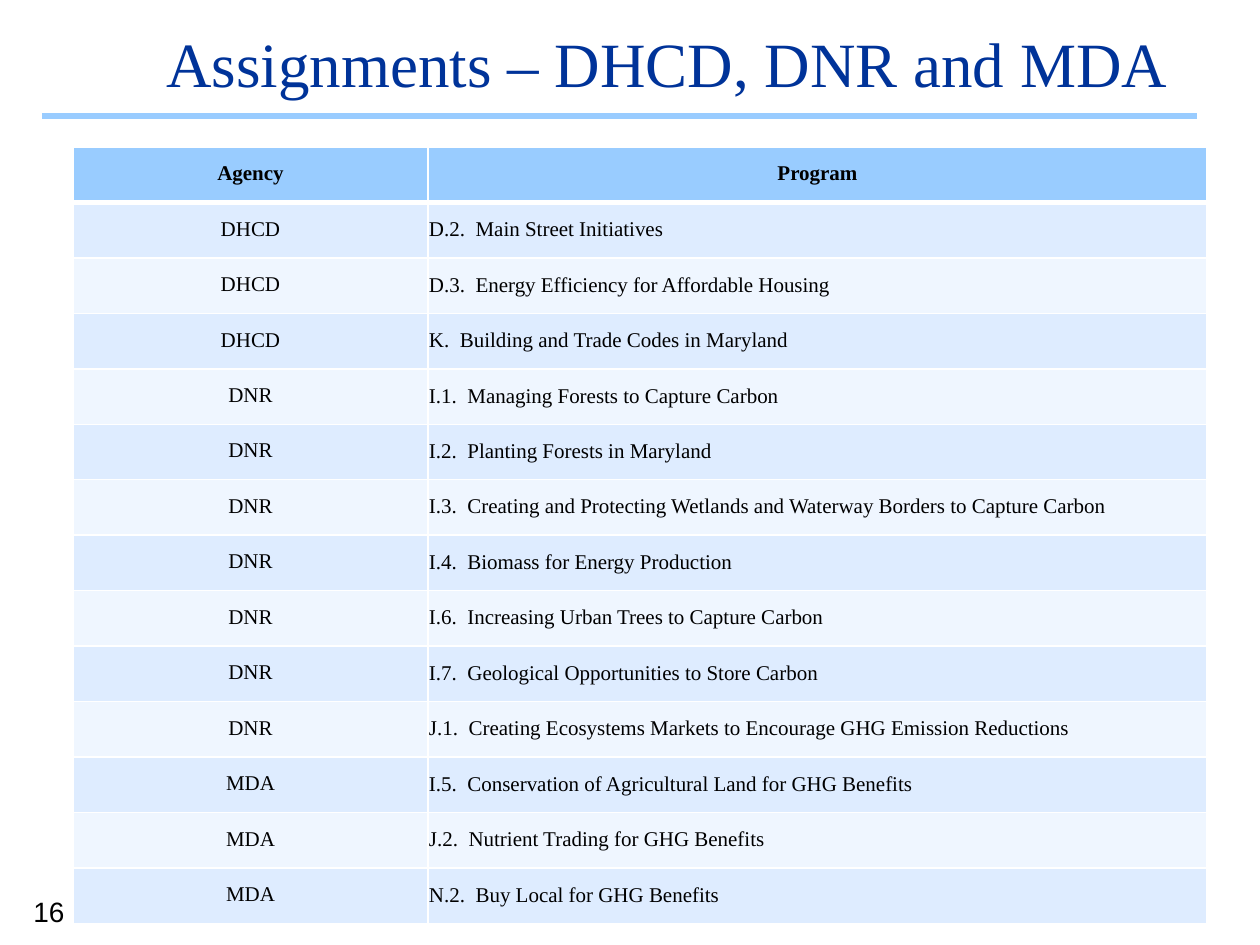
from lxml.etree import SubElement
from pptx import Presentation
from pptx.dml.color import RGBColor
from pptx.enum.shapes import MSO_CONNECTOR
from pptx.enum.text import MSO_ANCHOR, PP_ALIGN
from pptx.oxml.ns import qn
from pptx.util import Emu, Pt

SCALE = 914400 / 126  # EMU per px
NAVY = RGBColor(0x00, 0x33, 0x99)
SKY = RGBColor(0x99, 0xCC, 0xFF)
BAND_DARK = RGBColor(0xDE, 0xEC, 0xFF)
BAND_LIGHT = RGBColor(0xEF, 0xF6, 0xFF)
BLACK = RGBColor(0x00, 0x00, 0x00)
WHITE = RGBColor(0xFF, 0xFF, 0xFF)
SERIF, SANS = "Times New Roman", "Arial"

PROGRAMS = {
    "DHCD": [
        "D.2.  Main Street Initiatives",
        "D.3.  Energy Efficiency for Affordable Housing",
        "K.  Building and Trade Codes in Maryland",
    ],
    "DNR": [
        "I.1.  Managing Forests to Capture Carbon",
        "I.2.  Planting Forests in Maryland",
        "I.3.  Creating and Protecting Wetlands and Waterway Borders to Capture Carbon",
        "I.4.  Biomass for Energy Production",
        "I.6.  Increasing Urban Trees to Capture Carbon",
        "I.7.  Geological Opportunities to Store Carbon",
        "J.1.  Creating Ecosystems Markets to Encourage GHG Emission Reductions",
    ],
    "MDA": [
        "I.5.  Conservation of Agricultural Land for GHG Benefits",
        "J.2.  Nutrient Trading for GHG Benefits",
        "N.2.  Buy Local for GHG Benefits",
    ],
}


def px(n):
    return Emu(round(n * SCALE))


def write(tf, text, size, font, color=BLACK, align=PP_ALIGN.LEFT, bold=False):
    p = tf.paragraphs[0]
    p.alignment = align
    p.line_spacing = 0.85
    r = p.add_run()
    r.text = text
    r.font.size = Pt(size)
    r.font.name = font
    r.font.bold = bold
    r.font.color.rgb = color


def add_text(s, x, y, w, h, text, size, font, anchor=MSO_ANCHOR.TOP, **style):
    tf = s.shapes.add_textbox(px(x), px(y), px(w), px(h)).text_frame
    tf.word_wrap = True
    tf.vertical_anchor = anchor
    write(tf, text, size, font, **style)


def add_heading(s, x, y, w, h):
    # Title, with a rule along the bottom of the region
    add_text(s, x + 105, y, w - 115, h - 1, "Assignments – DHCD, DNR and MDA", 36, SERIF,
             anchor=MSO_ANCHOR.MIDDLE, color=NAVY, align=PP_ALIGN.CENTER)
    rule = s.shapes.add_connector(MSO_CONNECTOR.STRAIGHT, px(x), px(y + h), px(x + w), px(y + h))
    rule.line.color.rgb = SKY
    rule.line.width = Pt(3.75)
    SubElement(rule._element.spPr, qn("a:effectLst"))


def set_borders(cell, **widths):
    # Borders go before the fill in the cell properties
    tcPr = cell._tc.get_or_add_tcPr()
    for side in "LRTB":
        ln = SubElement(tcPr, qn(f"a:ln{side}"), w=str(Pt(widths.get(side, 1))))
        fill = SubElement(ln, qn("a:solidFill"))
        SubElement(fill, qn("a:srgbClr"), val=str(WHITE))


def add_program_table(s, x, y, w, h):
    rows = [("Agency", "Program")]
    rows += [(agency, name) for agency, names in PROGRAMS.items() for name in names]
    table = s.shapes.add_table(len(rows), 2, px(x), px(y), px(w), px(h)).table
    agency_w = 355
    table.columns[0].width = px(agency_w)
    table.columns[1].width = px(w - agency_w)
    for i, texts in enumerate(rows):
        table.rows[i].height = Emu(px(h) // len(rows))
        header = i == 0
        band = SKY if header else (BAND_LIGHT, BAND_DARK)[i % 2]
        for j, text in enumerate(texts):
            cell = table.cell(i, j)
            # A thick line parts the header from the body
            set_borders(cell, T=3 if i == 1 else 1, B=3 if header else 1)
            cell.fill.solid()
            cell.fill.fore_color.rgb = band
            cell.vertical_anchor = MSO_ANCHOR.MIDDLE
            centred = header or j == 0
            if not centred:
                cell.margin_left = cell.margin_right = cell.margin_top = px(1)
                cell.margin_bottom = 0
            write(cell.text_frame, text, 12, SERIF, bold=header,
                  align=PP_ALIGN.CENTER if centred else PP_ALIGN.LEFT)


def main():
    prs = Presentation()
    prs.slide_width, prs.slide_height = px(1260), px(945)
    s = prs.slides.add_slide(prs.slide_layouts[6])
    add_heading(s, 42, 21, 1155, 95)
    add_program_table(s, 73, 147, 1134, 777)
    # Slide number
    add_text(s, 21, 893, 63, 42, "16", 16, SANS)
    prs.save("out.pptx")


if __name__ == "__main__":
    main()
